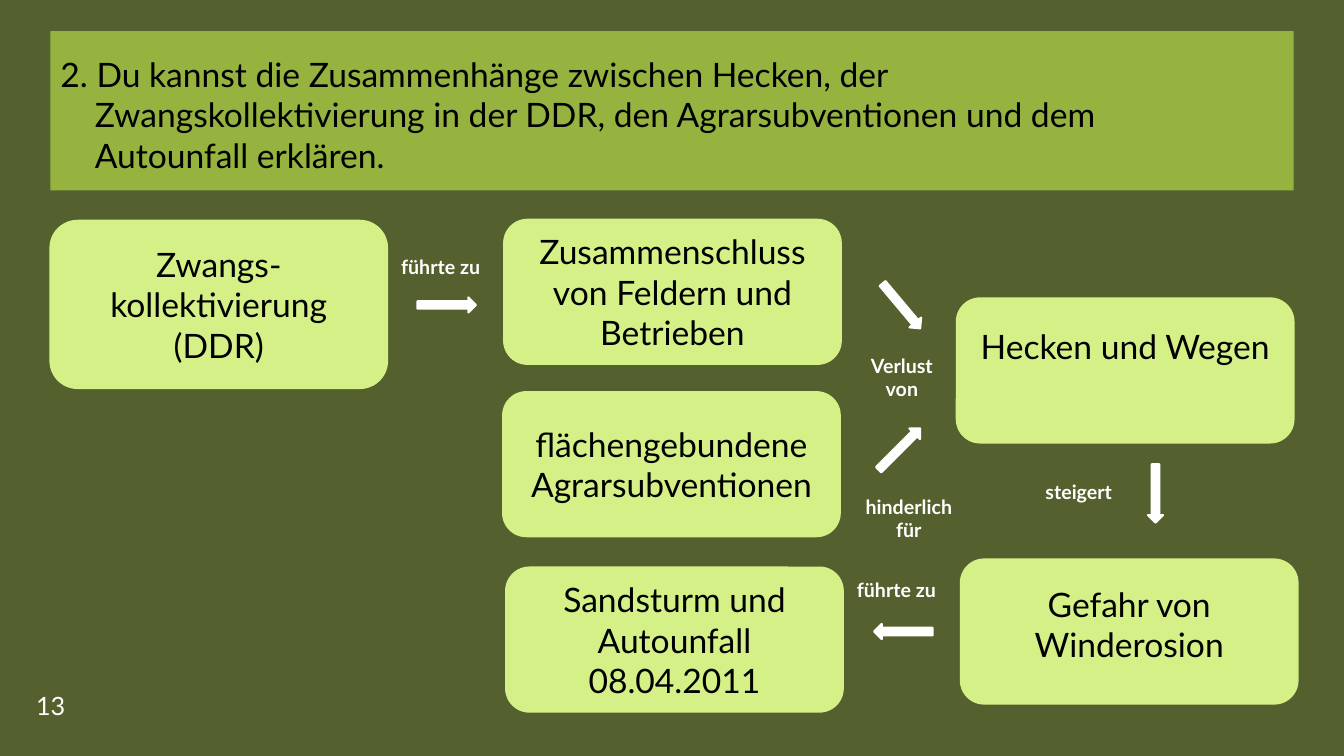
"""Build the slide that links hedges, collectivisation, subsidies and the accident."""
import dataclasses

import lxml.etree
import pptx
import pptx.dml.color
import pptx.enum.shapes
import pptx.enum.text
import pptx.oxml.ns
import pptx.presentation
import pptx.shapes.autoshape
import pptx.slide
import pptx.text.text
import pptx.util

Inches = pptx.util.Inches
Align = pptx.enum.text.PP_ALIGN
Anchor = pptx.enum.text.MSO_ANCHOR
Preset = pptx.enum.shapes.MSO_SHAPE


@dataclasses.dataclass(frozen=True)
class Theme:
    font: str = "Lato"
    background: str = "54612E"
    banner: str = "96B340"
    card: str = "D5F086"
    dark: str = "000000"
    light: str = "FFFFFF"
    body_size: int = 24
    number_size: int = 18
    label_size: int = 14


@dataclasses.dataclass(frozen=True)
class Card:
    text: str
    left: float
    top: float
    height: float = 1.45
    top_inset: float | None = None


@dataclasses.dataclass(frozen=True)
class Arrow:
    left: float
    top: float
    rotation: int


@dataclasses.dataclass(frozen=True)
class Label:
    text: str
    left: float
    top: float
    width: float = 1.11
    height: float = 0.34
    alignment: Align = Align.LEFT
    size: int = 14
    bold: bool = True


THEME = Theme()
CARD_WIDTH = 3.36
ARROW_WIDTH, ARROW_HEIGHT = 0.58, 0.15
TITLE = (
    "2. Du kannst die Zusammenhänge zwischen Hecken, der Zwangskollektivierung "
    "in der DDR, den Agrarsubventionen und dem Autounfall erklären."
)
CARDS = (
    Card("Zwangs-kollektivierung (DDR)", 0.49, 2.18, height=1.68),
    Card("Zusammenschluss von Feldern und Betrieben", 4.99, 2.17),
    Card("flächengebundene Agrarsubventionen", 4.98, 3.88),
    Card("Hecken und Wegen", 9.48, 2.95, top_inset=0.21),
    Card("Gefahr von Winderosion", 9.52, 5.54, top_inset=0.18),
    Card("Sandsturm und Autounfall 08.04.2011", 5.01, 5.62),
)
ARROWS = (
    Arrow(4.14, 2.95, 0),
    Arrow(8.65, 2.96, 50),
    Arrow(8.63, 4.38, 315),
    Arrow(11.17, 4.82, 90),
    Arrow(8.67, 6.19, 180),
)
LABELS = (
    Label("führte zu", 3.88, 2.48),
    Label("Verlust von", 8.39, 3.46, height=0.57, alignment=Align.CENTER),
    Label("hinderlich für", 8.4, 4.86, 1.23, 0.57, Align.CENTER),
    Label("steigert", 10.27, 4.71),
    Label("führte zu", 8.4, 5.68),
    Label("13", 0.26, 6.8, 0.56, 0.4, size=THEME.number_size, bold=False),
)


def color(value: str) -> pptx.dml.color.RGBColor:
    """Turn a theme value into a colour."""
    return pptx.dml.color.RGBColor.from_string(value)


def write(
    frame: pptx.text.text.TextFrame, text: str, size: int, tint: str,
    alignment: Align, bold: bool = False,
) -> None:
    """Write one wrapped paragraph into a text frame."""
    frame.word_wrap = True
    frame.auto_size = pptx.enum.text.MSO_AUTO_SIZE.NONE
    paragraph = frame.paragraphs[0]
    paragraph.alignment = alignment
    run = paragraph.add_run()
    run.text = text
    run.font.name = THEME.font
    run.font.size = pptx.util.Pt(size)
    run.font.bold = bold
    run.font.color.rgb = color(tint)


def paint(shape: pptx.shapes.autoshape.Shape, fill: str) -> None:
    """Give a shape a flat fill without outline or shadow."""
    shape.shadow.inherit = False
    shape.fill.solid()
    shape.fill.fore_color.rgb = color(fill)
    shape.line.fill.background()


def format_title(slide: pptx.slide.Slide) -> None:
    """Shape the title placeholder as a rounded banner with a hanging indent."""
    title = slide.shapes.title
    title.left, title.top = Inches(0.5), Inches(0.31)
    title.width, title.height = Inches(12.33), Inches(1.58)
    geometry = lxml.etree.SubElement(
        title._element.spPr, pptx.oxml.ns.qn("a:prstGeom"), prst="roundRect"
    )
    lxml.etree.SubElement(geometry, pptx.oxml.ns.qn("a:avLst"))
    paint(title, THEME.banner)
    frame = title.text_frame
    frame.vertical_anchor = Anchor.MIDDLE
    frame.margin_top, frame.margin_bottom = Inches(0.07), 0
    frame.margin_right = Inches(1.35)
    write(frame, TITLE, THEME.body_size, THEME.dark, Align.LEFT)
    properties = frame.paragraphs[0]._p.get_or_add_pPr()
    properties.set("marL", str(Inches(0.34)))
    properties.set("indent", str(-Inches(0.34)))


def add_card(slide: pptx.slide.Slide, card: Card) -> None:
    """Draw one rounded step of the causal chain."""
    shape = slide.shapes.add_shape(
        Preset.ROUNDED_RECTANGLE, Inches(card.left), Inches(card.top),
        Inches(CARD_WIDTH), Inches(card.height),
    )
    paint(shape, THEME.card)
    frame = shape.text_frame
    frame.margin_top = Inches(card.top_inset or 0)
    frame.margin_bottom = 0
    frame.vertical_anchor = Anchor.MIDDLE if card.top_inset is None else Anchor.TOP
    write(frame, card.text, THEME.body_size, THEME.dark, Align.CENTER)


def add_arrow(slide: pptx.slide.Slide, arrow: Arrow) -> None:
    """Draw one rotated block arrow."""
    shape = slide.shapes.add_shape(
        Preset.RIGHT_ARROW, Inches(arrow.left), Inches(arrow.top),
        Inches(ARROW_WIDTH), Inches(ARROW_HEIGHT),
    )
    paint(shape, THEME.light)
    shape.line.color.rgb = color(THEME.light)
    shape.line.width = pptx.util.Pt(1.5)
    shape.rotation = arrow.rotation


def add_label(slide: pptx.slide.Slide, label: Label) -> None:
    """Place one light text on the background."""
    box = slide.shapes.add_textbox(
        Inches(label.left), Inches(label.top), Inches(label.width), Inches(label.height)
    )
    write(box.text_frame, label.text, label.size, THEME.light, label.alignment, label.bold)


def main() -> None:
    """Build and save the presentation."""
    presentation = pptx.Presentation()
    presentation.slide_width = Inches(13.33)
    presentation.slide_height = Inches(7.5)
    slide = presentation.slides.add_slide(presentation.slide_layouts[5])
    slide.background.fill.solid()
    slide.background.fill.fore_color.rgb = color(THEME.background)
    format_title(slide)
    for card in CARDS:
        add_card(slide, card)
    for arrow in ARROWS:
        add_arrow(slide, arrow)
    for label in LABELS:
        add_label(slide, label)
    presentation.save("out.pptx")


if __name__ == "__main__":
    main()
